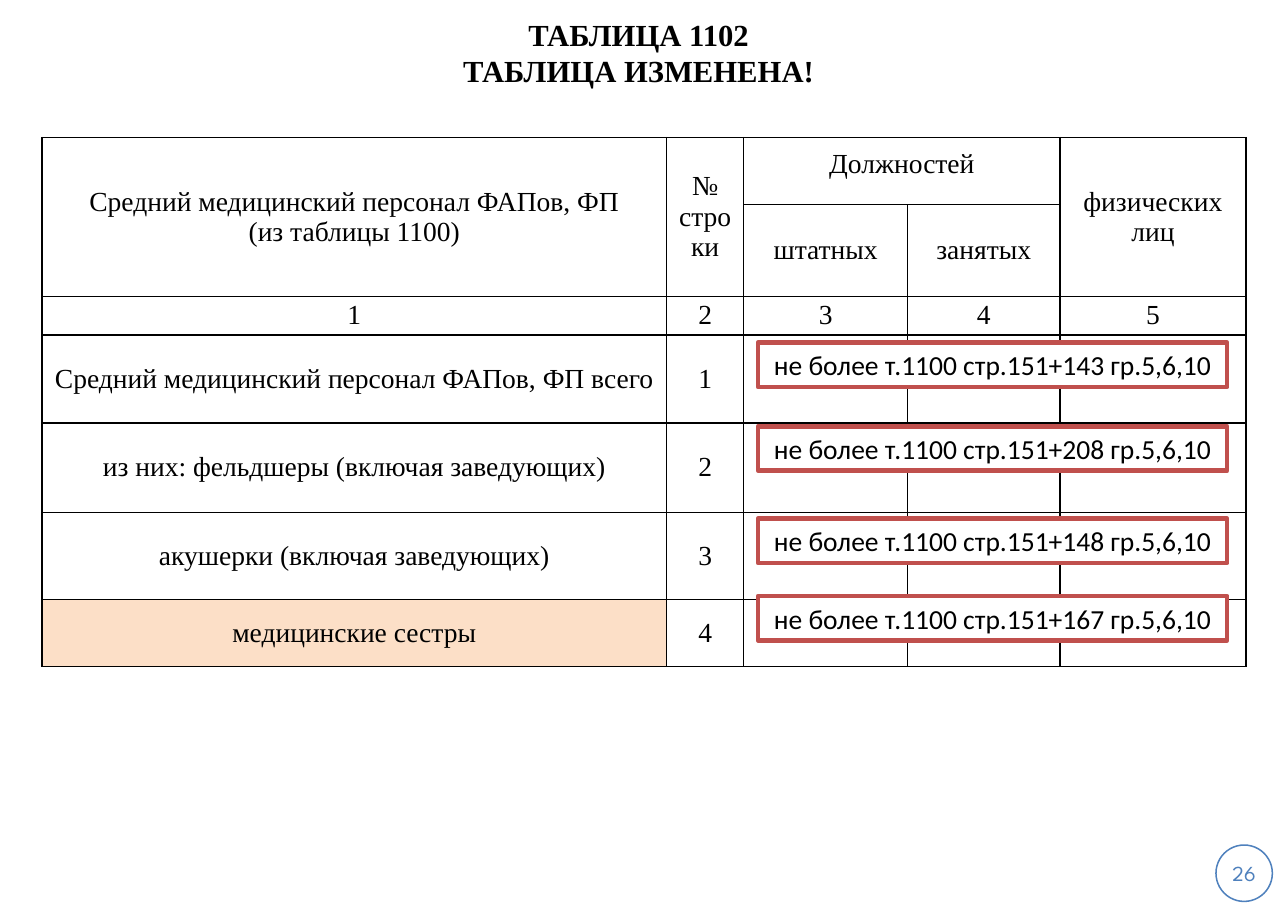
from dataclasses import dataclass

from lxml import etree
from pptx import Presentation
from pptx.dml.color import RGBColor
from pptx.enum.shapes import MSO_SHAPE
from pptx.enum.text import MSO_ANCHOR, MSO_AUTO_SIZE, PP_ALIGN
from pptx.oxml.ns import qn
from pptx.util import Cm, Pt

RECTANGLE, OVAL = MSO_SHAPE.RECTANGLE, MSO_SHAPE.OVAL
CENTER, MIDDLE = PP_ALIGN.CENTER, MSO_ANCHOR.MIDDLE
NO_AUTOFIT = MSO_AUTO_SIZE.NONE


@dataclass(frozen=True)
class Theme:
    ink: str = "000000"
    paper: str = "FFFFFF"
    limit_line: str = "C0504D"
    page_number: str = "4F81BD"
    highlight: str = "FAC090"
    highlight_alpha: int = 50
    table_font: str = "Times New Roman"
    limit_font: str = "Calibri"
    number_font: str = "League Spartan"
    title_size: int = 20
    text_size: int = 18
    number_size: int = 14


COLUMN_WIDTHS = [14.4, 1.78, 3.78, 3.51, 4.29]
ROW_HEIGHTS = [1.55, 1.85, 0.89, 2.03, 2.06, 2.01, 1.55]
ROWS = [
    ["Средний медицинский персонал ФАПов, ФП\n(из таблицы 1100)",
     "№\nстроки", "Должностей", "", "физических\nлиц"],
    ["", "", "штатных", "занятых", ""],
    ["1", "2", "3", "4", "5"],
    ["Средний медицинский персонал ФАПов, ФП всего", "1", "", "", ""],
    ["из них: фельдшеры (включая заведующих)", "2", "", "", ""],
    ["акушерки (включая заведующих)", "3", "", "", ""],
    ["медицинские сестры", "4", "", "", ""],
]
MERGES = [((0, 0), (1, 0)), ((0, 1), (1, 1)), ((0, 2), (0, 3)), ((0, 4), (1, 4))]
# Top of each limit box and the table line it refers to
LIMITS = [(7.9, 143), (9.83, 208), (11.96, 148), (13.74, 167)]


def write(frame, text, *, font, size, color, bold=False):
    """Fill a text frame with centred text, one paragraph per line."""
    frame.text = text
    for paragraph in frame.paragraphs:
        paragraph.alignment = CENTER
        paragraph.font.name = font
        paragraph.font.size = Pt(size)
        paragraph.font.bold = bold
        paragraph.font.color.rgb = RGBColor.from_string(color)


def set_margins(owner, left, top, right, bottom):
    owner.margin_left, owner.margin_top = Cm(left), Cm(top)
    owner.margin_right, owner.margin_bottom = Cm(right), Cm(bottom)


def set_borders(cell, color, width):
    properties = cell._tc.get_or_add_tcPr()
    for side in ("a:lnL", "a:lnR", "a:lnT", "a:lnB"):
        line = etree.SubElement(properties, qn(side), w=str(Pt(width)))
        fill = etree.SubElement(line, qn("a:solidFill"))
        etree.SubElement(fill, qn("a:srgbClr"), val=color)


def set_cell_fill(cell, color, alpha):
    cell.fill.solid()
    cell.fill.fore_color.rgb = RGBColor.from_string(color)
    shade = cell._tc.tcPr.find(qn("a:solidFill")).find(qn("a:srgbClr"))
    etree.SubElement(shade, qn("a:alpha"), val=str(alpha * 1000))


class SlideBuilder:
    def __init__(self, slide, theme):
        self.slide = slide
        self.theme = theme

    def title(self, text, left, top, width, height):
        title = self.slide.shapes.title
        title.left, title.top = Cm(left), Cm(top)
        title.width, title.height = Cm(width), Cm(height)
        frame = title.text_frame
        frame.auto_size = NO_AUTOFIT
        frame.vertical_anchor = MIDDLE
        set_margins(frame, 0, 0.13, 0.25, 0.13)
        write(frame, text, font=self.theme.table_font, size=self.theme.title_size,
              color=self.theme.ink, bold=True)

    def table(self, rows, left, top):
        theme = self.theme
        table = self.slide.shapes.add_table(
            len(rows), len(COLUMN_WIDTHS), Cm(left), Cm(top),
            Cm(sum(COLUMN_WIDTHS)), Cm(sum(ROW_HEIGHTS))).table
        table.first_row = table.horz_banding = False
        for column, width in zip(table.columns, COLUMN_WIDTHS):
            column.width = Cm(width)
        for row, height in zip(table.rows, ROW_HEIGHTS):
            row.height = Cm(height)
        for row, texts in zip(table.rows, rows):
            for cell, text in zip(row.cells, texts):
                cell.vertical_anchor = MIDDLE
                set_margins(cell, 0.18, 0, 0.18, 0)
                set_borders(cell, theme.ink, 1)
                cell.fill.background()
                write(cell.text_frame, text, font=theme.table_font,
                      size=theme.text_size, color=theme.ink)
        for start, end in MERGES:
            table.cell(*start).merge(table.cell(*end))
        return table

    def framed_text(self, kind, text, left, top, width, height, *,
                    line, line_width, fill=None, margin=None, **text_format):
        shape = self.slide.shapes.add_shape(
            kind, Cm(left), Cm(top), Cm(width), Cm(height))
        shape.shadow.inherit = False
        if fill:
            shape.fill.solid()
            shape.fill.fore_color.rgb = RGBColor.from_string(fill)
        else:
            shape.fill.background()
        shape.line.color.rgb = RGBColor.from_string(line)
        shape.line.width = Pt(line_width)
        shape.text_frame.vertical_anchor = MIDDLE
        if margin is not None:
            set_margins(shape.text_frame, margin, margin, margin, margin)
        write(shape.text_frame, text, **text_format)


def main():
    theme = Theme()
    deck = Presentation()
    deck.slide_width, deck.slide_height = Cm(29.7), Cm(21)
    builder = SlideBuilder(deck.slides.add_slide(deck.slide_layouts[5]), theme)

    builder.title("ТАБЛИЦА 1102\vТАБЛИЦА ИЗМЕНЕНА!", 0, 0, 29.7, 2.41)
    staff = builder.table(ROWS, 0.97, 3.17)
    staff.cell(0, 2).text_frame.paragraphs[0].line_spacing = Pt(11)
    set_cell_fill(staff.cell(6, 0), theme.highlight, theme.highlight_alpha)

    for top, line_number in LIMITS:
        builder.framed_text(
            RECTANGLE, f"не более т.1100 стр.151+{line_number} гр.5,6,10",
            17.48, top, 10.82, 1.02, line=theme.limit_line, line_width=3,
            fill=theme.paper, font=theme.limit_font, size=theme.text_size,
            color=theme.ink)
    builder.framed_text(
        OVAL, "26", 28.04, 19.48, 1.3, 1.3, line=theme.page_number,
        line_width=1, margin=0, font=theme.number_font,
        size=theme.number_size, color=theme.page_number)
    deck.save("out.pptx")


if __name__ == "__main__":
    main()
